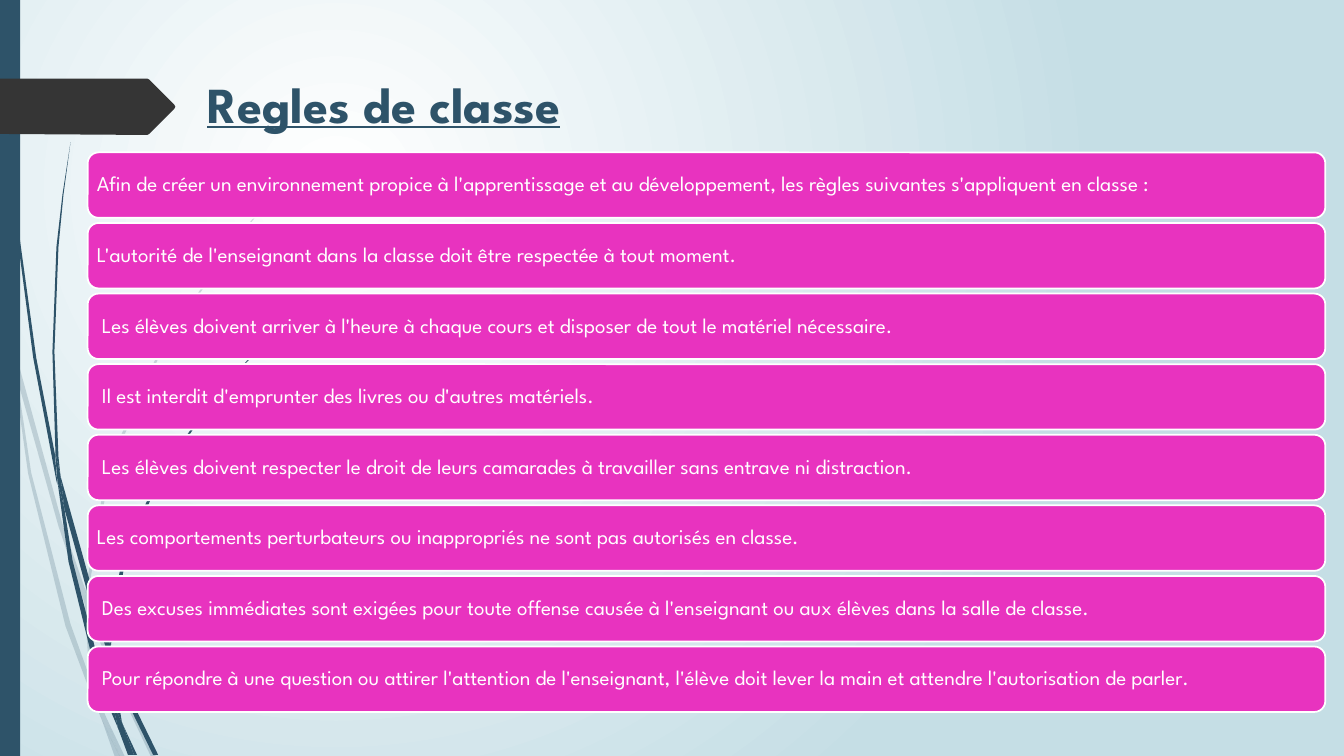
from dataclasses import dataclass

from lxml.etree import SubElement
from pptx import Presentation
from pptx.dml.color import RGBColor
from pptx.enum.shapes import MSO_SHAPE
from pptx.enum.text import MSO_ANCHOR, PP_ALIGN
from pptx.oxml.ns import qn
from pptx.util import Cm, Pt


@dataclass(frozen=True)
class Theme:
    font: str = "League Spartan"
    navy: str = "2E5369"
    dark: str = "353535"
    pink: str = "E833BF"
    white: str = "FFFFFF"
    sky: str = "C5DEE5"
    head: float = 36
    body: float = 15
    edge: float = 1.25


THEME = Theme()
UNIT = Cm(2.54) / 100  # outline points are hundredths of an inch

# Outlines of the pale and the dark grass blades
PALE = [
    [(11, 350), (9, 322), (0, 282), (0, 299), (10, 344)],
    [(58, 522), (84, 599), (85, 586), (62, 520), (14, 345), (17, 376)],
    [(92, 607), (88, 596), (88, 610), (123, 694), (150, 751), (155, 751),
     (127, 692)],
    [(119, 751), (124, 751), (105, 711)],
    [(93, 683), (70, 619), (31, 469), (17, 376), (11, 350), (28, 470),
     (65, 621), (92, 693), (101, 714), (99, 707)],
    [(84, 599), (87, 646), (93, 683), (96, 692), (105, 711), (103, 706),
     (91, 646), (88, 610), (88, 608)],
    [(88, 584), (110, 462), (160, 349), (229, 245), (268, 198), (290, 175),
     (312, 154), (312, 153), (289, 175), (268, 197), (228, 244), (158, 348),
     (107, 461), (85, 584), (85, 586), (88, 596)],
    [(101, 714), (114, 751), (119, 751)],
    [(88, 608), (88, 610), (88, 596), (85, 586), (84, 599)],
    [(96, 692), (93, 683), (99, 707), (101, 714), (119, 751), (105, 711)],
]
DARK = [
    [(7, 110), (17, 233), (33, 355), (56, 477), (57, 481), (55, 457),
     (55, 453), (36, 355), (19, 232), (8, 109), (5, 48), (4, 0), (3, 0),
     (4, 48)],
    [(88, 592), (106, 645), (106, 633), (106, 631), (93, 590), (60, 472),
     (64, 505)],
    [(113, 649), (110, 641), (111, 656), (132, 708), (152, 749), (157, 749),
     (136, 706)],
    [(110, 691), (98, 657), (72, 556), (64, 505), (57, 477), (68, 557),
     (93, 659), (111, 708), (117, 722), (116, 717)],
    [(60, 472), (58, 453), (54, 349), (58, 245), (63, 193), (70, 141),
     (62, 193), (56, 245), (52, 349), (55, 449)],
    [(133, 749), (136, 749), (122, 719)],
    [(57, 477), (64, 505), (60, 472), (55, 449), (55, 453)],
    [(111, 633), (125, 552), (158, 476), (205, 406), (231, 374), (245, 359),
     (261, 344), (260, 344), (245, 358), (231, 373), (204, 405), (156, 474),
     (122, 551), (106, 631), (110, 641)],
    [(117, 722), (127, 749), (131, 749)],
    [(106, 645), (110, 691), (116, 706), (122, 719), (121, 716), (111, 656),
     (109, 651)],
    [(106, 645), (109, 651), (111, 656), (110, 641), (106, 631), (106, 633)],
    [(116, 706), (110, 691), (116, 717), (117, 722), (130, 749), (133, 749),
     (122, 719)],
]
ARROW = [(0, 0), (146, 0), (148, 1), (173, 26), (174, 28), (173, 30),
         (148, 55), (146, 56), (0, 55)]

RULES = [
    "Afin de créer un environnement propice à l'apprentissage et au développement, les règles suivantes s'appliquent en classe :",
    "L'autorité de l'enseignant dans la classe doit être respectée à tout moment.",
    " Les élèves doivent arriver à l'heure à chaque cours et disposer de tout le matériel nécessaire.",
    " Il est interdit d'emprunter des livres ou d'autres matériels.",
    " Les élèves doivent respecter le droit de leurs camarades à travailler sans entrave ni distraction.",
    "Les comportements perturbateurs ou inappropriés ne sont pas autorisés en classe.",
    " Des excuses immédiates sont exigées pour toute offense causée à l'enseignant ou aux élèves dans la salle de classe.",
    " Pour répondre à une question ou attirer l'attention de l'enseignant, l'élève doit lever la main et attendre l'autorisation de parler.",
]


def rgb(code):
    return RGBColor.from_string(code)


def paint(shape, color):
    shape.shadow.inherit = False
    shape.fill.solid()
    shape.fill.fore_color.rgb = rgb(color)
    shape.line.fill.background()


def write(para, text, size, color):
    run = para.add_run()
    run.text = text
    run.font.name = THEME.font
    run.font.size = Pt(size)
    run.font.color.rgb = rgb(color)
    return run


def trace(shapes, points, left, top, color):
    pen = shapes.build_freeform(*points[0], scale=UNIT)
    pen.add_line_segments(points[1:], close=True)
    shape = pen.convert_to_shape(left, top)
    paint(shape, color)
    return shape


def backdrop(slide):
    fill = slide.background.fill
    fill.gradient()
    for stop, color in zip(fill.gradient_stops, (THEME.white, THEME.sky)):
        stop.color.rgb = rgb(color)
    # Radial glow centred on the upper left quarter
    grad = slide.element.find(".//" + qn("a:gradFill"))
    grad.remove(grad.find(qn("a:lin")))
    glow = SubElement(grad, qn("a:path"))
    glow.set("path", "circle")
    rect = SubElement(glow, qn("a:fillToRect"))
    for side, share in zip("ltrb", (50, 50, 100, 100)):
        rect.set(side, str(share * 1000))


def grass(slide, left, top, blades, alpha=None):
    group = slide.shapes.add_group_shape()
    for points in blades:
        blade = trace(group.shapes, points, left, top, THEME.navy)
        if alpha:
            tint = blade.element.find(".//" + qn("a:srgbClr"))
            SubElement(tint, qn("a:alpha")).set("val", str(alpha * 1000))


def margin(slide, left, top, width, height):
    bar = slide.shapes.add_shape(MSO_SHAPE.RECTANGLE, left, top, width, height)
    paint(bar, THEME.navy)
    trace(slide.shapes, ARROW, left, top + Cm(1.98), THEME.dark)


def title(slide, left, top, width, height):
    frame = slide.shapes.add_textbox(left, top, width, height).text_frame
    frame.word_wrap = True
    run = write(frame.paragraphs[0], "Regles de classe", THEME.head, THEME.navy)
    run.font.bold = True
    run.font.underline = True


def rules(slide, left, top, width, height):
    gap = Cm(0.13)
    tall = (height + gap) // len(RULES) - gap
    for row, text in enumerate(RULES):
        card = slide.shapes.add_shape(MSO_SHAPE.ROUNDED_RECTANGLE, left,
                                      top + row * (tall + gap), width, tall)
        paint(card, THEME.pink)
        card.line.color.rgb = rgb(THEME.white)
        card.line.width = Pt(THEME.edge)
        frame = card.text_frame
        frame.word_wrap = True
        frame.vertical_anchor = MSO_ANCHOR.MIDDLE
        # The rounded corner adds its own inset to the left and right
        frame.margin_left = frame.margin_right = Cm(0.15)
        para = frame.paragraphs[0]
        para.alignment = PP_ALIGN.LEFT
        para.line_spacing = 0.9
        write(para, text, THEME.body, THEME.white)


def main():
    deck = Presentation()
    deck.slide_width, deck.slide_height = Cm(33.87), Cm(19.05)
    slide = deck.slides.add_slide(deck.slide_layouts[6])
    backdrop(slide)
    grass(slide, 0, 0, PALE, alpha=20)
    grass(slide, 0, 0, DARK)
    margin(slide, 0, 0, Cm(0.51), deck.slide_height)
    title(slide, Cm(4.98), Cm(1.73), Cm(26.97), Cm(3.56))
    rules(slide, Cm(2.21), Cm(3.84), Cm(31.19), Cm(14.1))
    deck.save("out.pptx")


if __name__ == "__main__":
    main()
